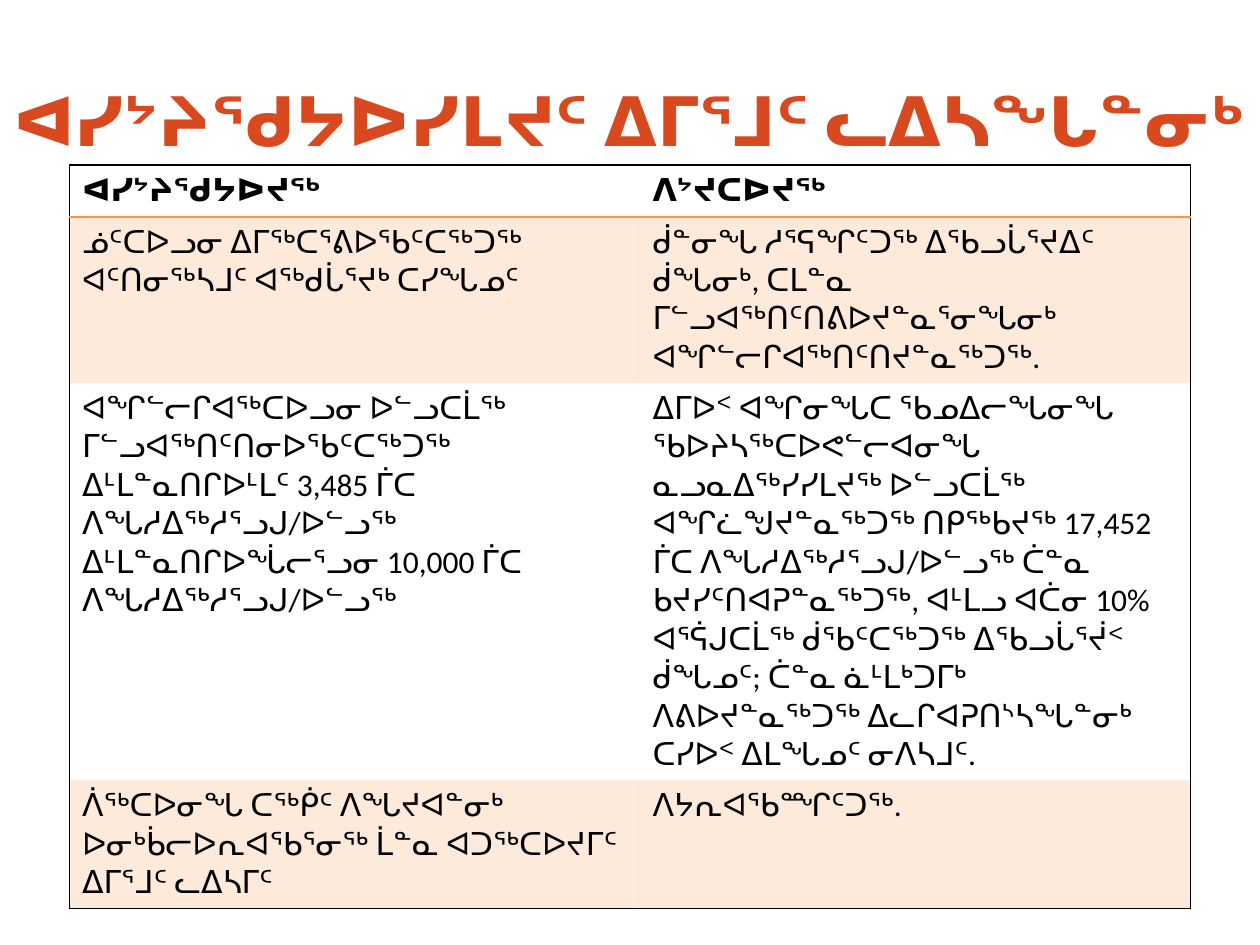
"""Build a slide comparing proposed water licence amendments with their rationale."""
import pptx
import pptx.dml.color
import pptx.enum.text
import pptx.oxml.ns
import pptx.util
from lxml import etree

TITLE = "ᐊᓯᔾᔨᖁᔭᐅᓯᒪᔪᑦ ᐃᒥᕐᒧᑦ ᓚᐃᓴᖓᓐᓂᒃ"
ROWS = [
    ("ᐊᓯᔾᔨᖁᔭᐅᔪᖅ", "ᐱᔾᔪᑕᐅᔪᖅ"),
    (
        "ᓅᑦᑕᐅᓗᓂ ᐃᒥᖅᑕᕐᕕᐅᖃᑦᑕᖅᑐᖅ ᐊᑦᑎᓂᖅᓴᒧᑦ ᐊᖅᑯᒑᕐᔪᒃ ᑕᓯᖓᓄᑦ",
        "ᑰᓐᓂᖓ ᓱᕐᕋᖏᑦᑐᖅ ᐃᖃᓗᒑᕐᔪᐃᑦ ᑰᖓᓂᒃ, ᑕᒪᓐᓇ ᒥᓪᓗᐊᖅᑎᑦᑎᕕᐅᔪᓐᓇᕐᓂᖓᓂᒃ "
        "ᐊᖏᓪᓕᒋᐊᖅᑎᑦᑎᔪᓐᓇᖅᑐᖅ.",
    ),
    (
        "ᐊᖏᓪᓕᒋᐊᖅᑕᐅᓗᓂ ᐅᓪᓗᑕᒫᖅ ᒥᓪᓗᐊᖅᑎᑦᑎᓂᐅᖃᑦᑕᖅᑐᖅ ᐃᒻᒪᓐᓇᑎᒋᐅᒻᒪᑦ 3,485 ᒦᑕ "
        "ᐱᖓᓱᐃᖅᓱᕐᓗᒍ/ᐅᓪᓗᖅ ᐃᒻᒪᓐᓇᑎᒋᐅᖔᓕᕐᓗᓂ 10,000 ᒦᑕ ᐱᖓᓱᐃᖅᓱᕐᓗᒍ/ᐅᓪᓗᖅ",
        "ᐃᒥᐅᑉ ᐊᖏᓂᖓᑕ ᖃᓄᐃᓕᖓᓂᖓ ᖃᐅᔨᓴᖅᑕᐅᕙᓪᓕᐊᓂᖓ ᓇᓗᓇᐃᖅᓯᓯᒪᔪᖅ ᐅᓪᓗᑕᒫᖅ "
        "ᐊᖏᓛᖑᔪᓐᓇᖅᑐᖅ ᑎᑭᖅᑲᔪᖅ 17,452 ᒦᑕ ᐱᖓᓱᐃᖅᓱᕐᓗᒍ/ᐅᓪᓗᖅ ᑖᓐᓇ "
        "ᑲᔪᓯᑦᑎᐊᕈᓐᓇᖅᑐᖅ, ᐊᒻᒪᓗ ᐊᑖᓂ 10% ᐊᕐᕌᒍᑕᒫᖅ ᑰᖃᑦᑕᖅᑐᖅ ᐃᖃᓗᒑᕐᔫᑉ ᑰᖓᓄᑦ; "
        "ᑖᓐᓇ ᓈᒻᒪᒃᑐᒥᒃ ᐱᕕᐅᔪᓐᓇᖅᑐᖅ ᐃᓚᒋᐊᕈᑎᔅᓴᖓᓐᓂᒃ ᑕᓯᐅᑉ ᐃᒪᖓᓄᑦ ᓂᐱᓴᒧᑦ.",
    ),
    (
        "ᐲᖅᑕᐅᓂᖓ ᑕᖅᑮᑦ ᐱᖓᔪᐊᓐᓂᒃ ᐅᓂᒃᑳᓕᐅᕆᐊᖃᕐᓂᖅ ᒫᓐᓇ ᐊᑐᖅᑕᐅᔪᒥᑦ ᐃᒥᕐᒧᑦ ᓚᐃᓴᒥᑦ",
        "ᐱᔭᕆᐊᖃᙱᑦᑐᖅ.",
    ),
]
COLUMN_WIDTHS = [11.5, 11.1]
ROW_HEIGHTS = [1.04, 2.29, 6.38, 2.49]
THEME = {
    "font": "Calibri",
    "title_size": 39,
    "body_size": 18,
    "title": "D8491F",
    "text": "000000",
    "frame": "000000",
    "accent": "F79646",
    "band_opacity": 20,
}


def style_text(paragraph, size, color, bold):
    font = paragraph.font
    font.name = THEME["font"]
    font.size = pptx.util.Pt(size)
    font.bold = bold
    font.color.rgb = pptx.dml.color.RGBColor.from_string(color)


def set_border(cell, side, color):
    properties = cell._tc.get_or_add_tcPr()
    line = etree.SubElement(properties, pptx.oxml.ns.qn(f"a:ln{side}"), w=str(pptx.util.Pt(1)))
    if color:
        fill = etree.SubElement(line, pptx.oxml.ns.qn("a:solidFill"))
        etree.SubElement(fill, pptx.oxml.ns.qn("a:srgbClr"), val=color)
    else:
        etree.SubElement(line, pptx.oxml.ns.qn("a:noFill"))


def fill_band(cell):
    cell.fill.solid()
    cell.fill.fore_color.rgb = pptx.dml.color.RGBColor.from_string(THEME["accent"])
    color = cell._tc.tcPr.find("a:solidFill/a:srgbClr", pptx.oxml.ns._nsmap)
    etree.SubElement(color, pptx.oxml.ns.qn("a:alpha"), val=str(THEME["band_opacity"] * 1000))


def add_title(page):
    title = page.shapes.title
    title.left, title.top = pptx.util.Cm(0), pptx.util.Cm(0.76)
    title.width, title.height = pptx.util.Cm(25.4), pptx.util.Cm(3.18)
    title.text_frame.text = TITLE
    title.text_frame.vertical_anchor = pptx.enum.text.MSO_ANCHOR.MIDDLE
    paragraph = title.text_frame.paragraphs[0]
    paragraph.alignment = pptx.enum.text.PP_ALIGN.CENTER
    paragraph.line_spacing = 1.07
    paragraph.space_after = pptx.util.Pt(8)
    style_text(paragraph, THEME["title_size"], THEME["title"], True)


def add_amendments(page):
    table = page.shapes.add_table(
        len(ROWS), len(COLUMN_WIDTHS), pptx.util.Cm(1.4), pptx.util.Cm(3.33),
        pptx.util.Cm(sum(COLUMN_WIDTHS)), pptx.util.Cm(sum(ROW_HEIGHTS)),
    ).table
    table.horz_banding = False
    table.first_row = False
    for column, width in zip(table.columns, COLUMN_WIDTHS):
        column.width = pptx.util.Cm(width)
    for row, height in zip(table.rows, ROW_HEIGHTS):
        row.height = pptx.util.Cm(height)
    last_row, last_column = len(ROWS) - 1, len(COLUMN_WIDTHS) - 1
    frame, accent = THEME["frame"], THEME["accent"]
    for i, texts in enumerate(ROWS):
        for j, text in enumerate(texts):
            cell = table.cell(i, j)
            cell.text = text
            style_text(cell.text_frame.paragraphs[0], THEME["body_size"], THEME["text"], i == 0)
            borders = {
                "L": frame if j == 0 else None,
                "R": frame if j == last_column else None,
                "T": {0: frame, 1: accent}.get(i),
                "B": {0: accent, last_row: frame}.get(i),
            }
            for side, color in borders.items():
                set_border(cell, side, color)
            if i % 2:
                fill_band(cell)
            else:
                cell.fill.background()


def main():
    deck = pptx.Presentation()
    deck.slide_width, deck.slide_height = pptx.util.Cm(25.4), pptx.util.Cm(19.05)
    page = deck.slides.add_slide(deck.slide_layouts[5])
    add_title(page)
    add_amendments(page)
    deck.save("out.pptx")


if __name__ == "__main__":
    main()
